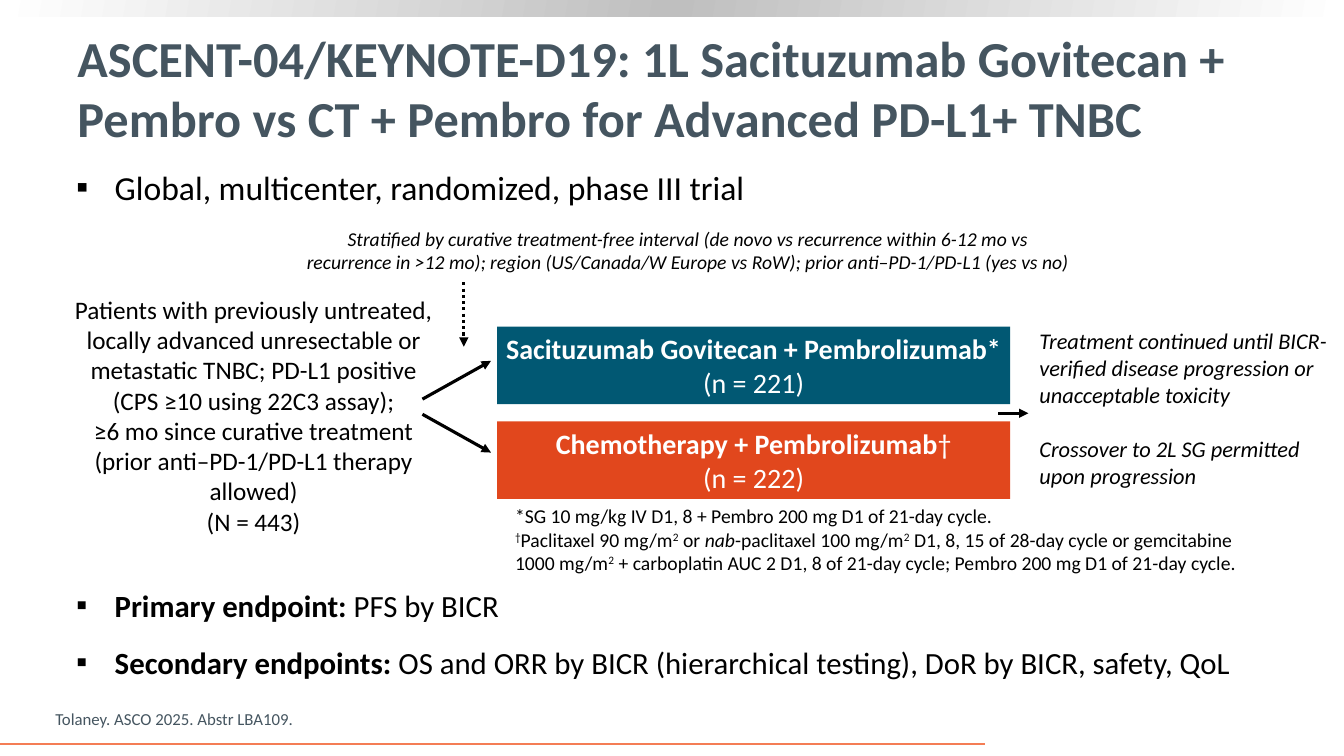
import copy

import pptx
import pptx.dml.color
import pptx.enum.dml
import pptx.enum.shapes
import pptx.enum.text
import pptx.oxml.ns
import pptx.oxml.xmlchemy
import pptx.util

qn = pptx.oxml.ns.qn
Inches = pptx.util.Inches
Pt = pptx.util.Pt
ALIGN = pptx.enum.text.PP_ALIGN
ANCHOR = pptx.enum.text.MSO_ANCHOR

BLACK, WHITE, SLATE = "000000", "FFFFFF", "455560"
TEAL, ORANGE, CORAL = "015873", "E1471D", "F47D55"


def rgb(value):
    return pptx.dml.color.RGBColor.from_string(value)


def sub(parent, tag, **attrs):
    el = pptx.oxml.xmlchemy.OxmlElement(tag)
    for name, value in attrs.items():
        el.set(name, value)
    parent.append(el)
    return el


def write_text(tf, paragraphs, size=18, color=BLACK, font="Calibri", bold=False,
               italic=False, align=ALIGN.LEFT, anchor=ANCHOR.TOP, wrap=True,
               before=0, after=0, spacing=None, bullet=None):
    """Fill a frame; a paragraph is a string or a list of strings and (string, format) pairs."""
    tf.word_wrap = wrap
    tf.vertical_anchor = anchor
    for i, runs in enumerate(paragraphs):
        p = tf.paragraphs[0] if i == 0 else tf.add_paragraph()
        p.alignment = align
        p.space_before = Pt(before if i else 0)
        p.space_after = Pt(after)
        if spacing:
            p.line_spacing = spacing
        if bullet:
            pPr = p._p.get_or_add_pPr()
            indent = Inches(0.38)
            pPr.set("marL", str(indent))
            pPr.set("indent", str(-indent))
            sub(sub(pPr, "a:buClr"), "a:srgbClr", val=BLACK)
            sub(pPr, "a:buFont", typeface=font)
            sub(pPr, "a:buChar", char=bullet)
        for part in [runs] if isinstance(runs, str) else runs:
            text, fmt = (part, {}) if isinstance(part, str) else part
            r = p.add_run()
            r.text = text
            r.font.name = font
            r.font.size = Pt(size)
            r.font.bold = fmt.get("bold", bold)
            r.font.italic = fmt.get("italic", italic)
            r.font.color.rgb = rgb(color)
            if fmt.get("superscript"):
                r._r.get_or_add_rPr().set("baseline", "30000")


class TrialSlide:
    def __init__(self, prs):
        self.shapes = prs.slides.add_slide(prs.slide_layouts[6]).shapes

    def text(self, x, y, w, h, paragraphs, **fmt):
        sp = self.shapes.add_textbox(Inches(x), Inches(y), Inches(w), Inches(h))
        write_text(sp.text_frame, paragraphs, **fmt)

    def bullets(self, y, h, paragraphs, size):
        self.text(0.66, y, 11.96, h, paragraphs, size=size, bullet="▪",
                  before=10, after=7, spacing=0.9)

    def rect(self, x, y, w, h):
        sp = self.shapes.add_shape(pptx.enum.shapes.MSO_SHAPE.RECTANGLE,
                                   Inches(x), Inches(y), Inches(w), Inches(h))
        sp.shadow.inherit = False
        sp.line.fill.background()
        return sp

    def arm(self, y, color, paragraphs):
        sp = self.rect(4.93, y, 5.09, 0.77)
        sp.fill.solid()
        sp.fill.fore_color.rgb = rgb(color)
        write_text(sp.text_frame, paragraphs, size=20, color=WHITE, bold=True,
                   align=ALIGN.CENTER, anchor=ANCHOR.MIDDLE, wrap=False)

    def gradient_band(self, h, colors, angle):
        sp = self.rect(0, 0, 13.33, h)
        sp.fill.gradient()
        sp.fill.gradient_angle = angle
        stops = sp._element.spPr.find(".//" + qn("a:gsLst"))
        stops.append(copy.deepcopy(stops[-1]))
        for i, (stop, color) in enumerate(zip(sp.fill.gradient_stops, colors)):
            stop.position = i / (len(colors) - 1)
            stop.color.rgb = rgb(color)

    def line(self, x1, y1, x2, y2, color=BLACK, width=2.25, arrow=True, dotted=False):
        cx = self.shapes.add_connector(pptx.enum.shapes.MSO_CONNECTOR.STRAIGHT,
                                       Inches(x1), Inches(y1), Inches(x2), Inches(y2))
        cx.line.color.rgb = rgb(color)
        cx.line.width = Pt(width)
        if dotted:
            cx.line.dash_style = pptx.enum.dml.MSO_LINE.ROUND_DOT
        spPr = cx._element.spPr
        if arrow:
            sub(spPr.find(qn("a:ln")), "a:tailEnd", type="triangle")
        sub(spPr, "a:effectLst")


def main():
    prs = pptx.Presentation()
    prs.slide_width, prs.slide_height = Inches(13.33), Inches(7.5)
    s = TrialSlide(prs)
    plain, sup = {"bold": False}, {"superscript": True}

    # Top band and bottom rule
    s.gradient_band(0.16, [WHITE, "BFBFBF", WHITE], 170)
    s.line(0, 7.38, 9.77, 7.38, color=CORAL, width=1.5, arrow=False)

    # Title and bullets
    s.text(0.67, 0.26, 12.18, 1.21,
           ["ASCENT-04/KEYNOTE-D19: 1L Sacituzumab Govitecan + "
            "Pembro vs CT + Pembro for Advanced PD-L1+ TNBC"],
           size=36, color=SLATE, bold=True, anchor=ANCHOR.MIDDLE)
    s.bullets(1.65, 0.5, ["Global, multicenter, randomized, phase III trial"], 24)
    s.bullets(5.81, 1.1, [
        [("Primary endpoint:", {"bold": True}), " PFS by BICR"],
        [("Secondary endpoints:", {"bold": True}),
         " OS and ORR by BICR (hierarchical testing), DoR by BICR, safety, QoL"],
    ], 22)

    # Population and stratification
    s.text(0.62, 2.87, 3.79, 2.52, [
        "Patients with previously untreated, locally advanced unresectable or "
        "metastatic TNBC; PD-L1 positive (CPS ≥10 using 22C3 assay);",
        "≥6 mo since curative treatment (prior anti–PD-1/PD-L1 therapy allowed)",
        "(N = 443)",
    ], align=ALIGN.CENTER)
    s.text(2.94, 2.2, 7.77, 0.57, [
        "Stratified by curative treatment-free interval (de novo vs recurrence within "
        "6-12 mo vs recurrence in >12 mo); region (US/Canada/W Europe vs RoW); "
        "prior anti–PD-1/PD-L1 (yes vs no)",
    ], size=14, italic=True, align=ALIGN.CENTER)

    # Treatment arms
    s.arm(3.24, TEAL, ["Sacituzumab Govitecan + Pembrolizumab*", [("(n = 221)", plain)]])
    s.arm(4.18, ORANGE, [["Chemotherapy + Pembrolizumab", ("†", plain)],
                         [("(n = 222)", plain)]])

    # Arrows
    s.line(4.6, 2.8, 4.6, 3.44, dotted=True)
    s.line(4.19, 3.96, 4.87, 3.58)
    s.line(4.19, 4.11, 4.87, 4.49)
    s.line(9.9, 4.1, 10.2, 4.1)

    # Follow-up, dosing and citation
    s.text(10.21, 3.05, 3.05, 1.99, [
        "Treatment continued until BICR-verified disease progression or "
        "unacceptable toxicity",
        "Crossover to 2L SG permitted upon progression",
    ], size=16, italic=True, anchor=ANCHOR.MIDDLE, before=19.5)
    s.text(5.01, 4.95, 7.61, 0.81, [
        "*SG 10 mg/kg IV D1, 8 + Pembro 200 mg D1 of 21-day cycle.",
        [("†", sup), "Paclitaxel 90 mg/m", ("2", sup), " or ", ("nab", {"italic": True}),
         "-paclitaxel 100 mg/m", ("2", sup),
         " D1, 8, 15 of 28-day cycle or gemcitabine 1000 mg/m", ("2", sup),
         " + carboplatin AUC 2 D1, 8 of 21-day cycle; Pembro 200 mg D1 of 21-day cycle."],
    ], size=14)
    s.text(0.45, 6.98, 8.76, 0.3, ["Tolaney. ASCO 2025. Abstr LBA109."],
           size=12, color=SLATE, anchor=ANCHOR.BOTTOM)

    prs.save("out.pptx")


if __name__ == "__main__":
    main()
